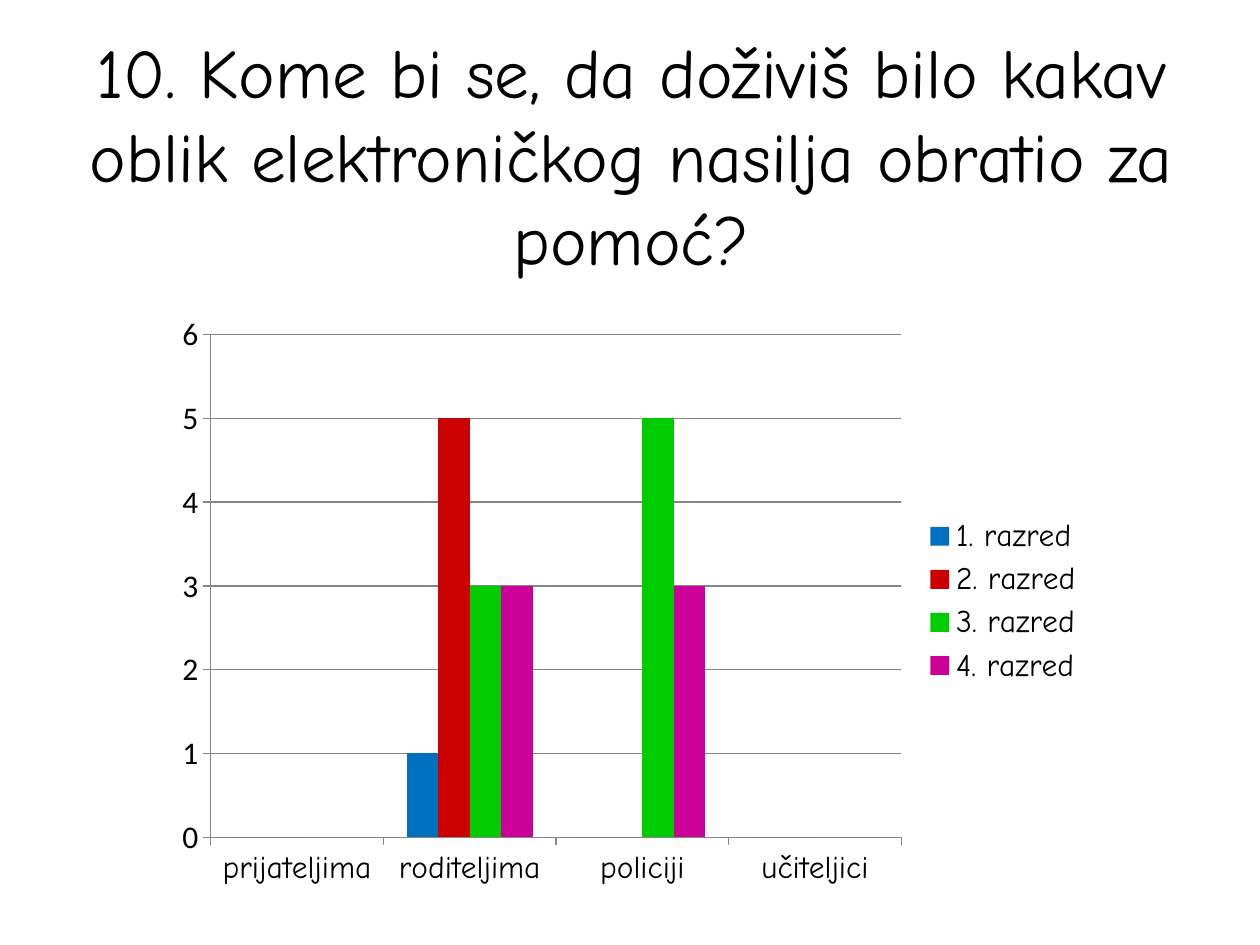
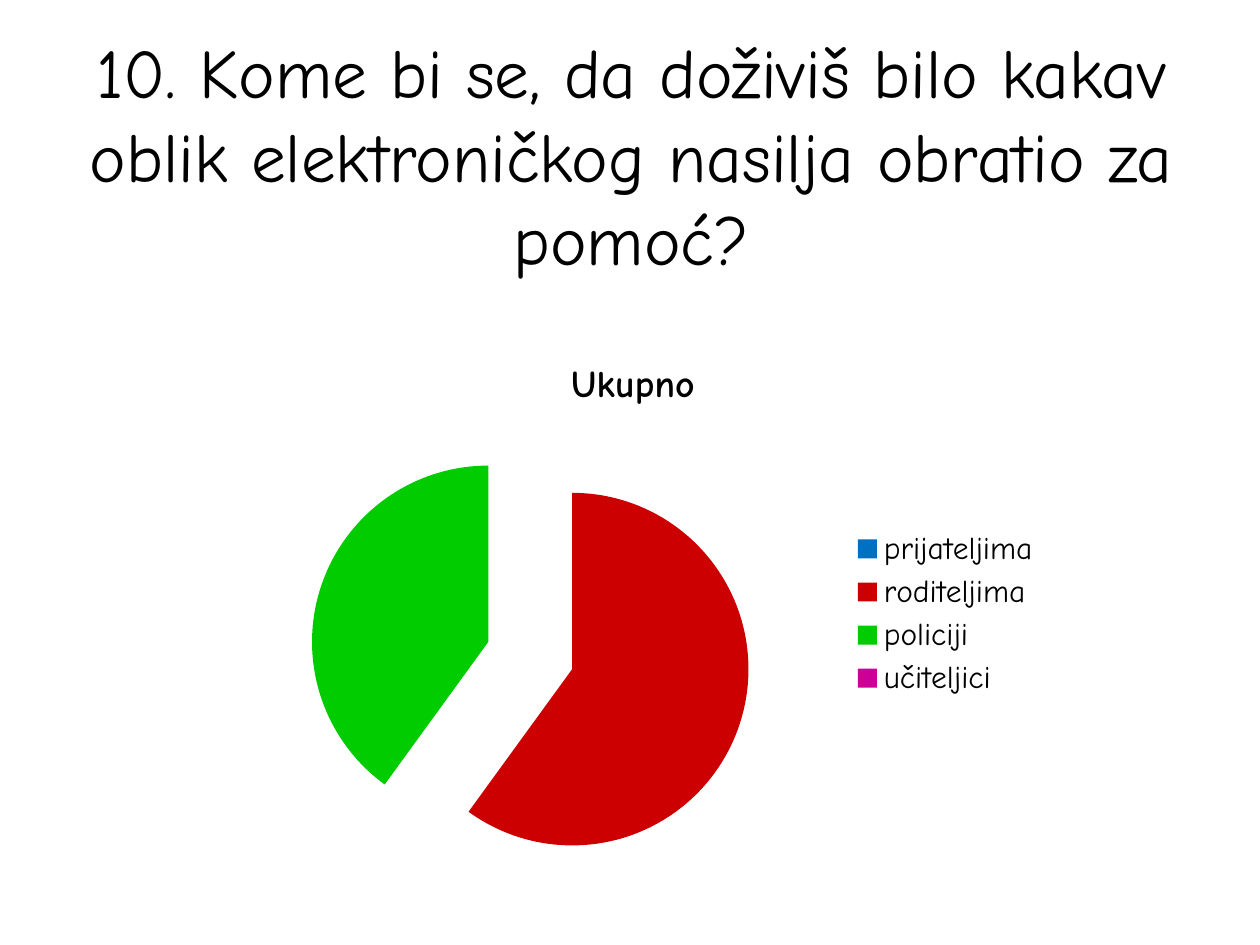
import dataclasses

import pptx
import pptx.chart.data
import pptx.dml.color
import pptx.enum.chart
import pptx.enum.text
import pptx.oxml
import pptx.oxml.ns
import pptx.util

Inches = pptx.util.Inches
Pt = pptx.util.Pt


def rgb(code):
    return pptx.dml.color.RGBColor.from_string(code)


@dataclasses.dataclass(frozen=True)
class Theme:
    text: str = "000000"
    background: str = "FFFFFF"
    axis: str = "868686"
    palette: tuple = ("0070C0", "CC0000", "00CC00", "CC0099")
    display_font: str = "Comic Neue"
    chart_font: str = "Calibri"
    title_size: float = 39.6
    chart_title_size: float = 21.6
    chart_size: float = 18


THEME = Theme()
QUESTION = ("10. Kome bi se, da doživiš bilo kakav oblik elektroničkog "
            "nasilja obratio za pomoć?")
HELPERS = ("prijateljima", "roditeljima", "policiji", "učiteljici")
ANSWERS_BY_CLASS = {
    "1. razred": (0, 1, 0, 0),
    "2. razred": (0, 5, 0, 0),
    "3. razred": (0, 3, 5, 0),
    "4. razred": (None, 3, 3, 0),
}
ANSWERS_TOTAL = {"Ukupno": (0, 60, 40, 0)}


def style_font(font, size, name=THEME.display_font, bold=False):
    font.name = name
    font.size = Pt(size)
    font.bold = bold
    font.color.rgb = rgb(THEME.text)


def add_question_slide(deck):
    slide = deck.slides.add_slide(deck.slide_layouts[5])
    slide.background.fill.solid()
    slide.background.fill.fore_color.rgb = rgb(THEME.background)
    title = slide.shapes.title
    title.left, title.top = Inches(0.51), Inches(0.6)
    title.width, title.height = Inches(9), Inches(1.25)
    frame = title.text_frame
    frame.word_wrap = True
    frame.auto_size = pptx.enum.text.MSO_AUTO_SIZE.NONE
    frame.vertical_anchor = pptx.enum.text.MSO_ANCHOR.MIDDLE
    para = frame.paragraphs[0]
    para.alignment = pptx.enum.text.PP_ALIGN.CENTER
    span = para.add_run()
    span.text = QUESTION
    style_font(span.font, THEME.title_size)
    return slide


def add_answer_chart(slide, kind, answers, left, top, width, height):
    """Add a chart of the answers per helper, with its legend on the right."""
    data = pptx.chart.data.CategoryChartData()
    data.categories = HELPERS
    for name, values in answers.items():
        data.add_series(name, values)
    chart = slide.shapes.add_chart(
        kind, Inches(left), Inches(top), Inches(width), Inches(height), data
    ).chart
    style_font(chart.font, THEME.chart_size, THEME.chart_font)
    chart.has_title = False
    chart.has_legend = True
    chart.legend.position = pptx.enum.chart.XL_LEGEND_POSITION.RIGHT
    chart.legend.include_in_layout = False
    style_font(chart.legend.font, THEME.chart_size)
    return chart


def fill_with_palette(items):
    for item, color in zip(items, THEME.palette):
        item.format.fill.solid()
        item.format.fill.fore_color.rgb = rgb(color)


def style_line(line):
    line.color.rgb = rgb(THEME.axis)
    line.width = Pt(0.75)


def style_axes(chart):
    fonts = (THEME.display_font, THEME.chart_font)
    for axis, font in zip((chart.category_axis, chart.value_axis), fonts):
        axis.major_tick_mark = pptx.enum.chart.XL_TICK_MARK.OUTSIDE
        style_line(axis.format.line)
        style_font(axis.tick_labels.font, THEME.chart_size, font)
    values = chart.value_axis
    values.minimum_scale, values.maximum_scale, values.major_unit = 0, 6, 1
    values.has_major_gridlines = True
    style_line(values.major_gridlines.format.line)


def add_class_columns(slide):
    kind = pptx.enum.chart.XL_CHART_TYPE.COLUMN_CLUSTERED
    chart = add_answer_chart(slide, kind, ANSWERS_BY_CLASS, 1.3, 2.41, 7.4, 4.72)
    plot = chart.plots[0]
    plot.vary_by_categories = False
    plot.gap_width = 150
    plot.overlap = 0
    fill_with_palette(plot.series)
    style_axes(chart)


def explode(series, percent):
    """Pull all slices of a pie series, already coloured, from the centre."""
    explosion = pptx.oxml.parse_xml(
        f'<c:explosion {pptx.oxml.ns.nsdecls("c")} val="{percent}"/>')
    first_point = series._element.find(pptx.oxml.ns.qn("c:dPt"))
    first_point.addprevious(explosion)


def add_total_pie(slide):
    kind = pptx.enum.chart.XL_CHART_TYPE.PIE
    chart = add_answer_chart(slide, kind, ANSWERS_TOTAL, 1.69, 2.65, 6.67, 4.44)
    chart.has_title = True
    span = chart.chart_title.text_frame.paragraphs[0].add_run()
    span.text = "Ukupno"
    style_font(span.font, THEME.chart_title_size, bold=True)
    chart.chart_title.include_in_layout = False
    plot = chart.plots[0]
    plot.vary_by_categories = True
    total = plot.series[0]
    fill_with_palette([total.points[index] for index in range(len(HELPERS))])
    explode(total, 25)


def main():
    deck = pptx.Presentation()
    deck.slide_width, deck.slide_height = Inches(10), Inches(7.5)
    for add_chart_content in (add_class_columns, add_total_pie):
        add_chart_content(add_question_slide(deck))
    deck.save("out.pptx")


if __name__ == "__main__":
    main()
